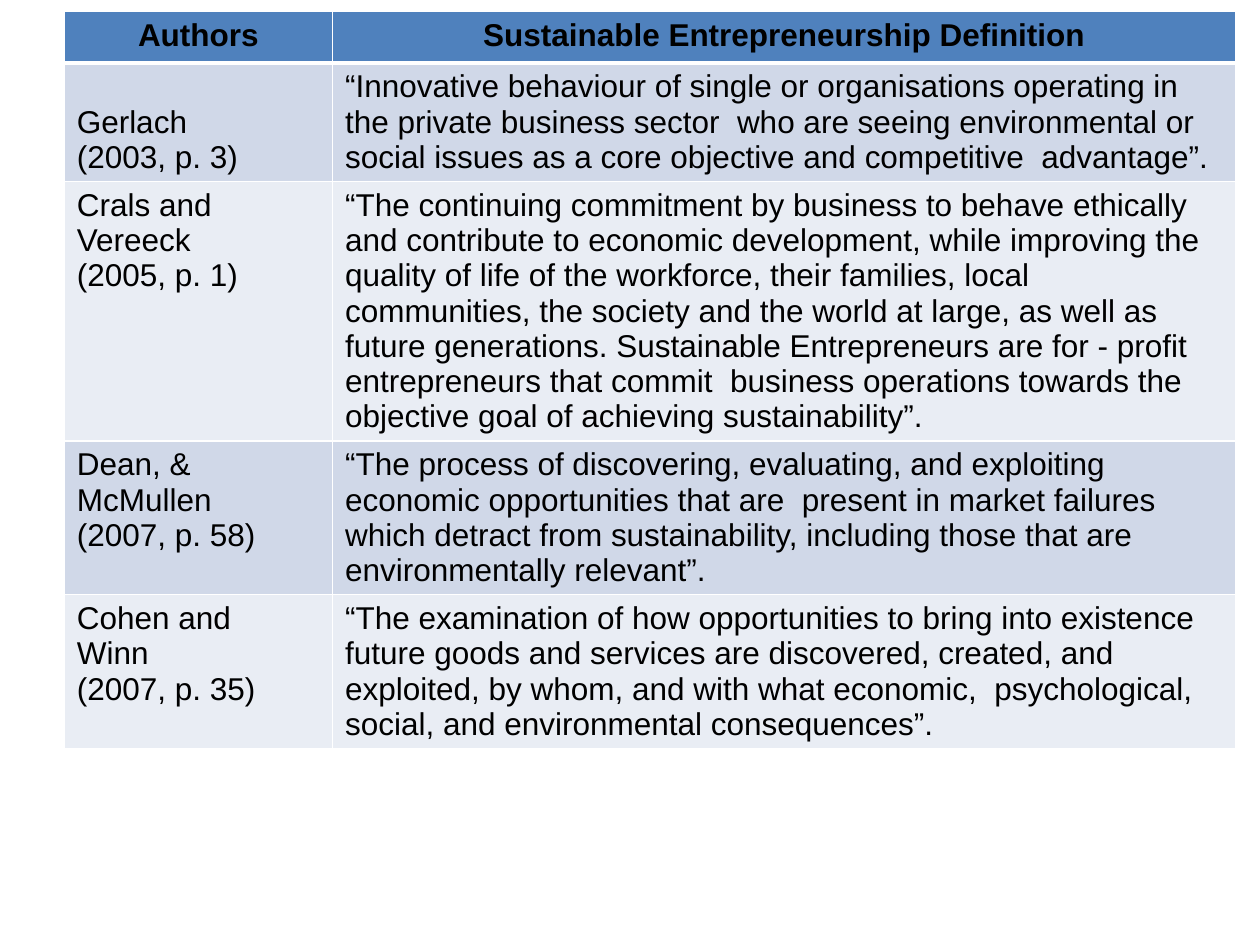
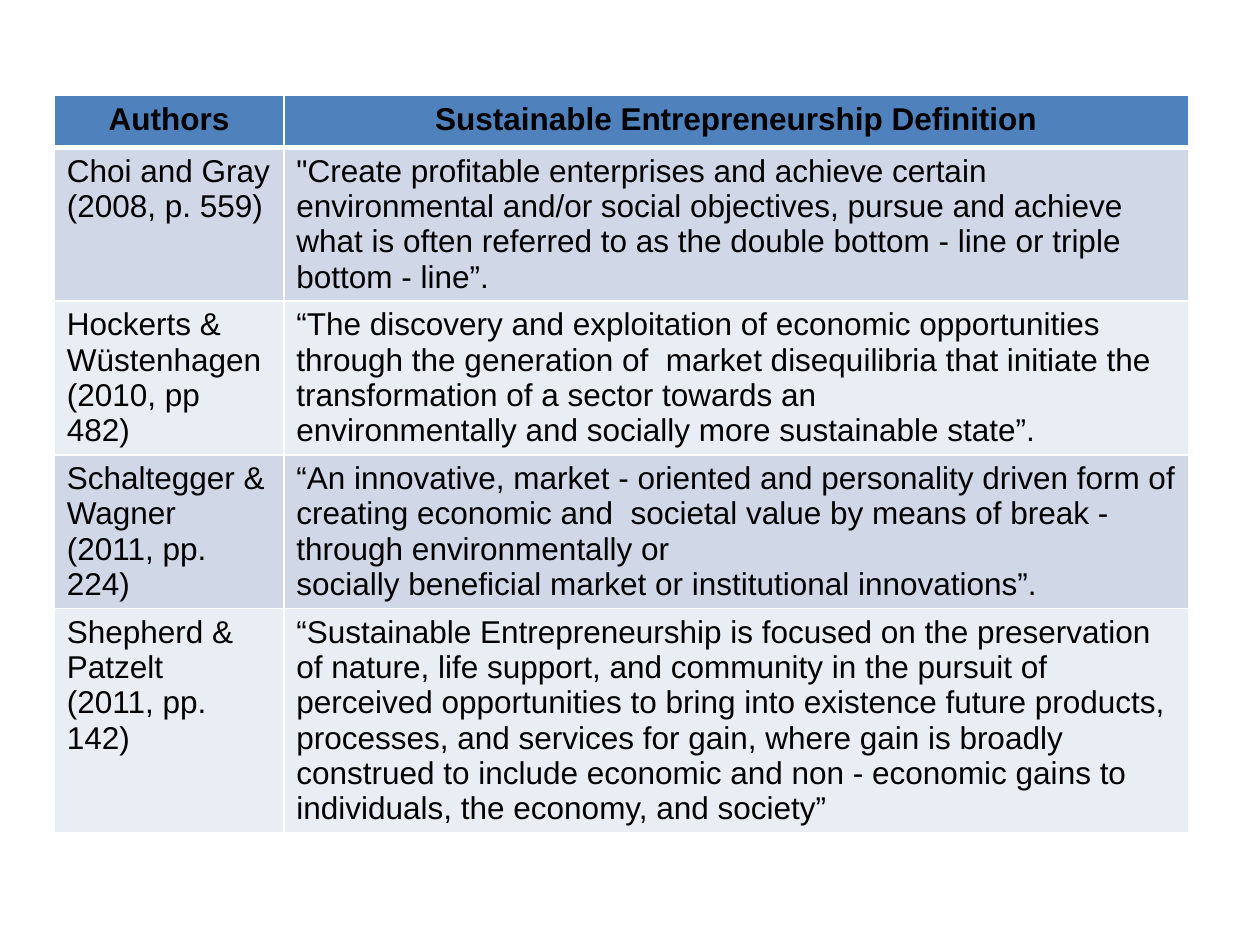
import pptx
import pptx.util
import pptx.dml.color
import pptx.enum.text
import pptx.oxml
import pptx.oxml.ns

Pt = pptx.util.Pt
ALIGN = pptx.enum.text.PP_ALIGN
ANCHOR = pptx.enum.text.MSO_ANCHOR

# Content: each row holds author lines, definition paragraphs, text lines high
HEADS = ("Authors", "Sustainable Entrepreneurship Definition")
PAGES = [
    {
        "left": 36.7, "top": 6.5, "widths": (153.3, 516.2), "low": {1},
        "rows": [
            (["Gerlach", "(2003, p. 3)"],
             ["“Innovative behaviour of single or organisations operating in the "
              "private business sector  who are seeing environmental or social "
              "issues as a core objective and competitive  advantage”."], 3),
            (["Crals and", "Vereeck", "(2005, p. 1)"],
             ["“The continuing commitment by business to behave ethically and "
              "contribute to economic development, while improving the quality of "
              "life of the workforce, their families, local communities, the "
              "society and the world at large, as well as future generations. "
              "Sustainable Entrepreneurs are for - profit entrepreneurs that "
              "commit  business operations towards the objective goal of "
              "achieving sustainability”."], 7),
            (["Dean, &", "McMullen", "(2007, p. 58)"],
             ["“The process of discovering, evaluating, and exploiting economic "
              "opportunities that are  present in market failures which detract "
              "from sustainability, including those that are  environmentally "
              "relevant”."], 4),
            (["Cohen and", "Winn", "(2007, p. 35)"],
             ["“The examination of how opportunities to bring into existence "
              "future goods and services are discovered, created, and exploited, "
              "by whom, and with what economic,  psychological, social, and "
              "environmental consequences”."], 4),
        ],
    },
    {
        "left": 31, "top": 54.7, "widths": (131.2, 517), "low": set(),
        "rows": [
            (["Choi and Gray", "(2008, p. 559)"],
             ["\"Create profitable enterprises and achieve certain environmental "
              "and/or social objectives, pursue and achieve what is often "
              "referred to as the double bottom - line or triple bottom - "
              "line”."], 4),
            (["Hockerts &", "Wüstenhagen", "(2010, pp 482)"],
             ["“The discovery and exploitation of economic opportunities through "
              "the generation of  market disequilibria that initiate the "
              "transformation of a sector towards an",
              "environmentally and socially more sustainable state”."], 4),
            (["Schaltegger &", "Wagner", "(2011, pp. 224)"],
             ["“An innovative, market - oriented and personality driven form of "
              "creating economic and  societal value by means of break - through "
              "environmentally or",
              "socially beneficial market or institutional innovations”."], 4),
            (["Shepherd &", "Patzelt", "(2011, pp. 142)"],
             ["“Sustainable Entrepreneurship is focused on the preservation of "
              "nature, life support, and community in the pursuit of perceived "
              "opportunities to bring into existence future products, processes, "
              "and services for gain, where gain is broadly construed to include "
              "economic and non - economic gains to individuals, the economy, "
              "and society”"], 6),
        ],
    },
]

# Shared style
HEAD, BANDS, LINE, INK = "4F81BD", ("D0D8E8", "E9EDF4"), "FFFFFF", "000000"
FONT, SIZE = "Arial", 18
HEAD_H, LINE_H, PAD = 29.5, 20.1, 7.2


def color(code):
    return pptx.dml.color.RGBColor.from_string(code)


def write(frame, paras, bold=False, align=ALIGN.LEFT):
    for i, text in enumerate(paras):
        para = frame.paragraphs[0] if i == 0 else frame.add_paragraph()
        para.alignment = align
        run = para.add_run()
        run.text = text
        run.font.name = FONT
        run.font.size = Pt(SIZE)
        run.font.bold = bold
        run.font.color.rgb = color(INK)


def edge(cell, **sides):
    """Draw cell borders; widths in points, keyed by side."""
    props = cell._tc.get_or_add_tcPr()
    for side, width in sides.items():
        props.append(pptx.oxml.parse_xml(
            f'<a:ln{side} {pptx.oxml.ns.nsdecls("a")} w="{Pt(width)}">'
            f'<a:solidFill><a:srgbClr val="{LINE}"/></a:solidFill></a:ln{side}>'))


def draw(slide, page):
    rows = [([HEADS[0]], [HEADS[1]], 1)] + page["rows"]
    highs = [HEAD_H] + [PAD + LINE_H * row[2] for row in page["rows"]]
    table = slide.shapes.add_table(
        len(rows), len(HEADS), Pt(page["left"]), Pt(page["top"]),
        Pt(sum(page["widths"])), Pt(sum(highs))).table
    for col, width in zip(table.columns, page["widths"]):
        col.width = Pt(width)

    for r, (row, high) in enumerate(zip(rows, highs)):
        table.rows[r].height = Pt(high)
        top = r == 0
        for c, paras in enumerate(row[:2]):
            cell = table.cell(r, c)
            # Borders come before the fill in the cell's properties
            edge(cell, L=1, R=1, T=3 if r == 1 else 1, B=3 if top else 1)
            cell.fill.solid()
            cell.fill.fore_color.rgb = color(HEAD if top else BANDS[(r - 1) % 2])
            low = c == 0 and r in page["low"]
            cell.vertical_anchor = ANCHOR.BOTTOM if low else ANCHOR.TOP
            write(cell.text_frame, paras, bold=top,
                  align=ALIGN.CENTER if top else ALIGN.LEFT)


def main():
    deck = pptx.Presentation()
    deck.slide_width, deck.slide_height = Pt(720), Pt(540)
    blank = deck.slide_layouts[6]
    for page in PAGES:
        draw(deck.slides.add_slide(blank), page)
    deck.save("out.pptx")


if __name__ == "__main__":
    main()
